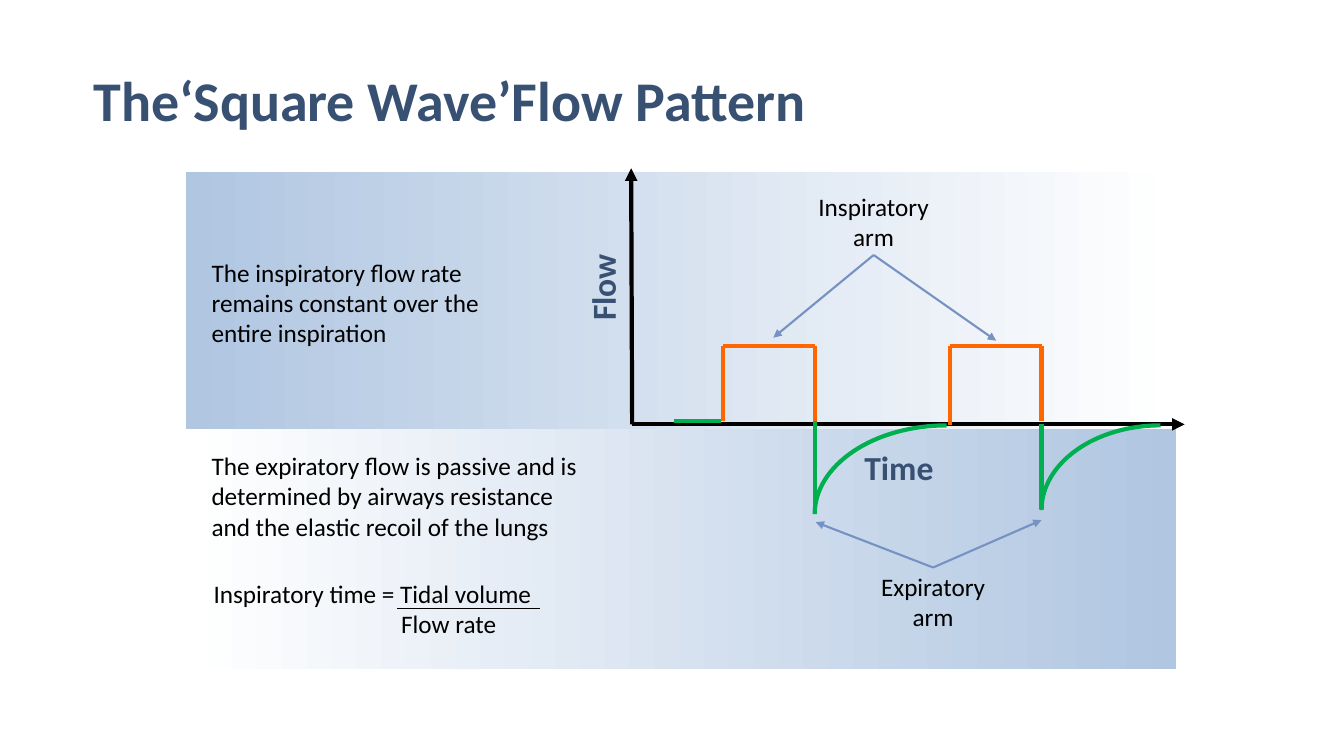
from math import cos, pi, sin

from lxml.etree import SubElement
from pptx import Presentation
from pptx.dml.color import RGBColor
from pptx.enum.shapes import MSO_CONNECTOR, MSO_SHAPE
from pptx.enum.text import MSO_ANCHOR, PP_ALIGN
from pptx.oxml.ns import qn
from pptx.util import Emu, Pt

PX = 9144  # EMU per px, 100 px to the inch
FONT = "Calibri"
NAVY = RGBColor(0x38, 0x50, 0x72)
BLACK = RGBColor(0x00, 0x00, 0x00)
WHITE = RGBColor(0xFF, 0xFF, 0xFF)
PALE_BLUE = RGBColor(0xB0, 0xC6, 0xE1)
POINTER_BLUE = RGBColor(0x76, 0x92, 0xC2)
ORANGE = RGBColor(0xFF, 0x66, 0x00)
GREEN = RGBColor(0x00, 0xB0, 0x50)


def px(*values):
    return [Emu(v * PX) for v in values]


def style_text(tf, size, color, bold=False, align=None):
    for p in tf.paragraphs:
        p.alignment = align
        for r in p.runs:
            r.font.name = FONT
            r.font.size = Pt(size)
            r.font.bold = bold
            r.font.color.rgb = color


def add_title(s, text):
    title = s.shapes.title
    title.left, title.top, title.width, title.height = px(83, 43, 1142, 95)
    tf = title.text_frame
    tf.text = text
    tf.vertical_anchor = MSO_ANCHOR.BOTTOM
    tf.paragraphs[0].line_spacing = 0.9
    style_text(tf, 40, NAVY, True, PP_ALIGN.LEFT)


def add_band(s, box, start, end):
    """Rectangle with a left-to-right gradient."""
    band = s.shapes.add_shape(MSO_SHAPE.RECTANGLE, *px(*box))
    band.shadow.inherit = False
    band.line.fill.background()
    band.fill.gradient()
    band.fill.gradient_angle = 0
    for stop, color, position in zip(band.fill.gradient_stops, (start, end), (0, 1)):
        stop.color.rgb = color
        stop.position = position


def add_text(s, box, text, wrap=True):
    """Black body text, left-aligned."""
    tb = s.shapes.add_textbox(*px(*box))
    tf = tb.text_frame
    tf.word_wrap = wrap
    tf.text = text
    style_text(tf, 18, BLACK)
    return tb


def add_label(s, box, text, size=18, color=BLACK, bold=False):
    """Text centred on its box, unwrapped."""
    tb = add_text(s, box, text, wrap=False)
    tb.text_frame.vertical_anchor = MSO_ANCHOR.MIDDLE
    style_text(tb.text_frame, size, color, bold, PP_ALIGN.CENTER)
    return tb


def add_line(s, x1, y1, x2, y2, color, width=3, arrow=False):
    line = s.shapes.add_connector(MSO_CONNECTOR.STRAIGHT, *px(x1, y1, x2, y2))
    line.line.color.rgb = color
    line.line.width = Pt(width)
    if arrow:
        SubElement(line.line._get_or_add_ln(), qn("a:tailEnd"), type="triangle")
    SubElement(line._element.spPr, qn("a:effectLst"))
    return line


def add_decay(s, x1, y1, x2, y2, steps=32):
    """Quarter ellipse rising from (x1, y1) and levelling off at (x2, y2)."""
    angles = [pi / 2 * i / steps for i in range(steps + 1)]
    points = [(round((x2 - (x2 - x1) * cos(a)) * PX),
               round((y1 - (y1 - y2) * sin(a)) * PX)) for a in angles]
    builder = s.shapes.build_freeform(*points[0])
    builder.add_line_segments(points[1:], close=False)
    curve = builder.convert_to_shape()
    curve.shadow.inherit = False
    curve.fill.background()
    curve.line.color.rgb = GREEN
    curve.line.width = Pt(3)


def add_breath(s, left, right, start, base, trough, end):
    """Square inspiration followed by a decaying expiration."""
    top = 343
    add_decay(s, right, trough + 1, end, 422)
    add_line(s, left, start, left, top, ORANGE)
    add_line(s, left, top, right, top, ORANGE)
    add_line(s, right, top, right, 418, ORANGE)
    add_line(s, right, base, right, trough, GREEN)


def add_arm(s, box, text, site, targets):
    """Label with an arrow from one of its sides to each target."""
    label = add_label(s, box, text)
    for x, y in targets:
        arrow = add_line(s, x, y, x, y, POINTER_BLUE, 1.5, arrow=True)
        arrow.begin_connect(label, site)


def add_formula(s):
    tb = add_text(s, (202, 562, 380, 83),
                  "Inspiratory time = Tidal volume\nFlow rate", wrap=False)
    tf = tb.text_frame
    tf.vertical_anchor = MSO_ANCHOR.MIDDLE
    tf.paragraphs[1]._p.get_or_add_pPr().set("marL", str(186 * PX))
    add_line(s, 394, 604, 536, 604, BLACK, 0.75)


def main():
    prs = Presentation()
    prs.slide_width, prs.slide_height = px(1333, 750)
    s = prs.slides.add_slide(prs.slide_layouts[5])
    add_title(s, "The‘Square Wave’Flow Pattern")

    add_band(s, (181, 424, 985, 240), WHITE, PALE_BLUE)
    add_band(s, (184, 171, 985, 255), PALE_BLUE, WHITE)

    add_line(s, 627, 421, 1175, 421, BLACK, arrow=True)
    add_line(s, 627, 421, 626, 167, BLACK, arrow=True)
    add_label(s, (829, 445, 125, 36), "Time", 24, NAVY, True)
    add_label(s, (552, 265, 91, 40), "Flow", 24, NAVY, True).rotation = 270

    add_line(s, 668, 418, 715, 418, GREEN)
    add_breath(s, 717, 808, 418, 418, 509, 939)
    add_breath(s, 942, 1033, 422, 421, 505, 1151)

    add_arm(s, (783, 186, 167, 67), "Inspiratory\narm", 2, [(767, 335), (988, 338)])
    add_arm(s, (842, 563, 167, 67), "Expiratory\narm", 0, [(809, 518), (1033, 516)])

    add_formula(s)
    add_text(s, (200, 442, 387, 101),
             "The expiratory flow is passive and is\n"
             "determined by airways resistance and the elastic recoil of the lungs")
    add_text(s, (200, 250, 295, 101),
             "The inspiratory flow rate remains constant over the entire inspiration")
    prs.save("out.pptx")


if __name__ == "__main__":
    main()
